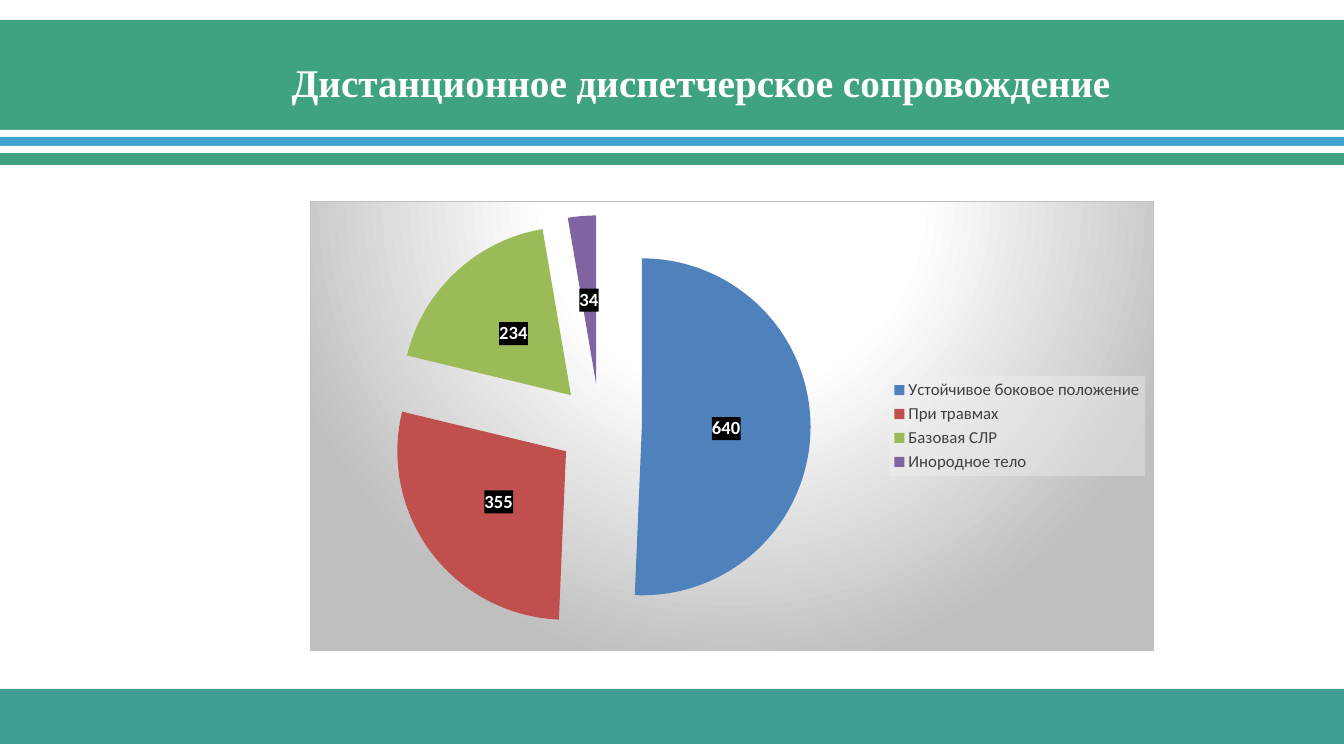
from dataclasses import dataclass

from lxml.etree import SubElement
from pptx import Presentation
from pptx.chart.data import CategoryChartData
from pptx.dml.color import RGBColor
from pptx.enum.chart import XL_CHART_TYPE as ChartType
from pptx.enum.chart import XL_LABEL_POSITION as LabelPosition
from pptx.enum.chart import XL_LEGEND_POSITION as LegendPosition
from pptx.enum.shapes import MSO_SHAPE as Preset
from pptx.enum.text import MSO_ANCHOR as Anchor
from pptx.enum.text import PP_ALIGN as Align
from pptx.oxml import parse_xml
from pptx.oxml.ns import nsdecls, qn
from pptx.util import Emu, Pt

SLIDE_W, SLIDE_H = 1344, 756


@dataclass(frozen=True)
class Theme:
    green: str = "3FA382"
    teal: str = "3F9F94"
    blue: str = "3FA1CD"
    white: str = "FFFFFF"
    grey: str = "BFBFBF"
    ink: str = "404040"
    legend_back: str = "F2F2F2"
    title_font: str = "Times New Roman"
    chart_font: str = "Calibri"
    title_size: float = 28
    chart_size: float = 10
    legend_size: float = 12
    label_size: float = 13.3


THEME = Theme()

BANDS = [
    (20, 145, THEME.green),
    (130, 7, THEME.white),
    (137, 9, THEME.blue),
    (146, 7, THEME.white),
    (689, 55, THEME.teal),
]

CASES = [
    ("Устойчивое боковое положение", 640, "4F81BD"),
    ("При травмах", 355, "C0504D"),
    ("Базовая СЛР", 234, "9BBB59"),
    ("Инородное тело", 34, "8064A2"),
]


def px(length):
    return Emu(round(length * 12192000 / SLIDE_W))


def style_font(font, name, size, color, bold=False):
    font.name = name
    font.size = Pt(size)
    font.bold = bold
    font.color.rgb = RGBColor.from_string(color)


def add_band(slide, top, height, color):
    band = slide.shapes.add_shape(
        Preset.RECTANGLE, 0, px(top), px(SLIDE_W), px(height))
    band.shadow.inherit = False
    band.fill.solid()
    band.fill.fore_color.rgb = RGBColor.from_string(color)
    band.line.fill.background()


def set_title(slide, text):
    title = slide.shapes.title
    title.left, title.top, title.width, title.height = map(px, (277, 53, 848, 58))
    frame = title.text_frame
    frame.text = text
    frame.word_wrap = False
    frame.vertical_anchor = Anchor.MIDDLE
    heading = frame.paragraphs[0]
    heading.alignment = Align.CENTER
    style_font(heading.runs[0].font, THEME.title_font, THEME.title_size,
               THEME.white, True)


def put_backdrop(chart, text_properties, content):
    backdrop = parse_xml(f'<c:spPr {nsdecls("c", "a")}>{content}</c:spPr>')
    chart.element.xpath(text_properties)[0].addprevious(backdrop)


def translucent(color, percent):
    return (f'<a:solidFill><a:srgbClr val="{color}">'
            f'<a:alpha val="{percent * 1000}"/></a:srgbClr></a:solidFill>')


def spotlight():
    stops = "".join(
        f'<a:gs pos="{percent * 1000}"><a:srgbClr val="{color}"/></a:gs>'
        for percent, color in [(0, THEME.white), (39, THEME.white), (100, THEME.grey)])
    return (f'<a:gradFill><a:gsLst>{stops}</a:gsLst><a:path path="circle">'
            '<a:fillToRect l="50000" t="-80000" r="50000" b="180000"/>'
            '</a:path></a:gradFill><a:ln w="9525"><a:solidFill>'
            f'<a:srgbClr val="{THEME.grey}"/></a:solidFill></a:ln>')


def explode(chart, percent):
    series = chart.element.xpath(".//c:ser")[0]
    explosion = SubElement(series, qn("c:explosion"), val=str(percent))
    series.xpath("c:dPt")[0].addprevious(explosion)


def add_cases_pie(slide):
    data = CategoryChartData()
    data.categories = [name for name, _, _ in CASES]
    data.add_series("Series 1", [count for _, count, _ in CASES])
    chart = slide.shapes.add_chart(
        ChartType.PIE, px(310), px(201), px(844), px(450), data).chart
    chart.has_title = False
    style_font(chart.font, THEME.chart_font, THEME.chart_size, "000000")

    chart.has_legend = True
    legend = chart.legend
    legend.position = LegendPosition.RIGHT
    legend.include_in_layout = False
    style_font(legend.font, THEME.chart_font, THEME.legend_size, THEME.ink)

    pie = chart.plots[0]
    pie.vary_by_categories = True
    series = pie.series[0]
    for index, (_, _, color) in enumerate(CASES):
        slice_fill = series.points[index].format.fill
        slice_fill.solid()
        slice_fill.fore_color.rgb = RGBColor.from_string(color)
    explode(chart, 25)

    labels = series.data_labels
    labels.show_value = True
    labels.show_percentage = False
    labels.position = LabelPosition.CENTER
    style_font(labels.font, THEME.chart_font, THEME.label_size, THEME.white, True)

    put_backdrop(chart, "c:txPr", spotlight())
    put_backdrop(chart, "c:chart/c:legend/c:txPr",
                 translucent(THEME.legend_back, 39))
    put_backdrop(chart, ".//c:ser/c:dLbls/c:txPr", translucent("000000", 75))


def main():
    deck = Presentation()
    deck.slide_width, deck.slide_height = px(SLIDE_W), px(SLIDE_H)
    slide = deck.slides.add_slide(deck.slide_layouts[5])
    for top, height, color in BANDS:
        add_band(slide, top, height, color)
    add_cases_pie(slide)
    set_title(slide, "Дистанционное диспетчерское сопровождение")
    title = slide.shapes.title.element
    title.getparent().append(title)
    deck.save("out.pptx")


if __name__ == "__main__":
    main()
